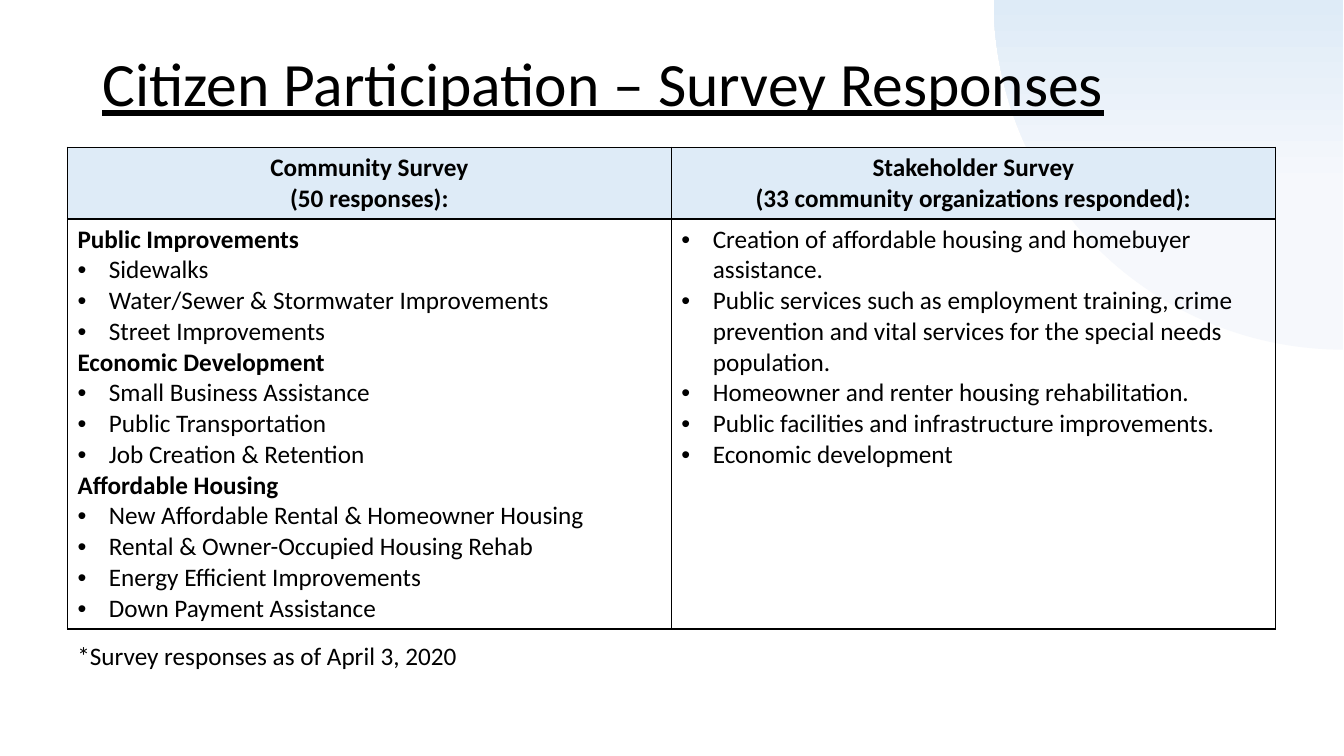
from copy import deepcopy
from pptx import Presentation
from pptx.dml.color import RGBColor
from pptx.enum.shapes import MSO_SHAPE as Preset
from pptx.enum.text import MSO_ANCHOR as Anchor, PP_ALIGN as Align
from pptx.oxml import parse_xml
from pptx.oxml.ns import nsdecls
from pptx.util import Cm, Pt


def color(value):
    return RGBColor.from_string(value)


def write(para, text, **changes):
    span = para.add_run()
    span.text = text
    values = {"name": "Calibri", "size": Pt(18), "bold": False} | changes
    for name, value in values.items():
        setattr(span.font, name, value)
    span.font.color.rgb = color("000000")


deck = Presentation()
deck.slide_width, deck.slide_height = Cm(33.87), Cm(19.05)
page = deck.slides.add_slide(deck.slide_layouts[6])

# Corner arc with a vertical gradient
arc = page.shapes.add_shape(Preset.ARC, Cm(25.04), Cm(-8.84), Cm(17.63), Cm(17.65))
arc.rotation = 180
arc.shadow.inherit = False
arc.line.fill.background()
arc.fill.gradient()
arc.fill.gradient_angle = 270
stop_list = arc.element.spPr.find(".//{*}gsLst")
for stop in list(stop_list)[:2]:
    stop_list.append(deepcopy(stop))
shades = [(0.23, "F6F8FC"), (0.5, "DEEBF7"), (0.79, "E3EAF6"), (0.92, "C7D5ED")]
for stop, (position, shade) in zip(arc.fill.gradient_stops, shades):
    stop.position = position
    stop.color.rgb = color(shade)

# Title
title = page.shapes.add_textbox(Cm(2.33), Cm(1.02), Cm(29.21), Cm(2.34)).text_frame
title.word_wrap = True
title.vertical_anchor = Anchor.MIDDLE
title.paragraphs[0].line_spacing = 0.9
write(title.paragraphs[0], "Citizen Participation – Survey Responses",
      size=Pt(44), underline=True)

# Survey table: headers and topics are bold, other body lines are bulleted
headers = [
    ["Community Survey", "(50 responses):"],
    ["Stakeholder Survey", "(33 community organizations responded):"],
]
topics = ["Public Improvements", "Economic Development", "Affordable Housing"]
answers = [
    [
        topics[0],
        "Sidewalks",
        "Water/Sewer & Stormwater Improvements",
        "Street Improvements",
        topics[1],
        "Small Business Assistance",
        "Public Transportation",
        "Job Creation & Retention",
        topics[2],
        "New Affordable Rental & Homeowner Housing",
        "Rental & Owner-Occupied Housing Rehab",
        "Energy Efficient Improvements",
        "Down Payment Assistance",
    ],
    [
        "Creation of affordable housing and homebuyer assistance.",
        "Public services such as employment training, crime prevention "
        "and vital services for the special needs population.",
        "Homeowner and renter housing rehabilitation.",
        "Public facilities and infrastructure improvements.",
        "Economic development",
    ],
]
table = page.shapes.add_table(2, 2, Cm(1.7), Cm(3.71), Cm(30.44), Cm(12.14)).table
table.horz_banding = False
for row, height in zip(table.rows, [1.81, 10.33]):
    row.height = Cm(height)

for row_index, row_texts in enumerate([headers, answers]):
    is_header = row_index == 0
    for column_index, lines in enumerate(row_texts):
        cell = table.cell(row_index, column_index)

        # Borders, then fill
        for side in "LRTB":
            cell._tc.get_or_add_tcPr().append(parse_xml(
                f'<a:ln{side} {nsdecls("a")} w="12700"><a:solidFill>'
                f'<a:srgbClr val="000000"/></a:solidFill></a:ln{side}>'))
        if is_header:
            cell.fill.solid()
            cell.fill.fore_color.rgb = color("DEEBF7")
        else:
            cell.fill.background()

        # Lines of text
        for line_index, text in enumerate(lines):
            frame = cell.text_frame
            para = frame.add_paragraph() if line_index else frame.paragraphs[0]
            para.alignment = Align.CENTER if is_header else Align.LEFT
            is_bold = is_header or text in topics
            write(para, text, bold=is_bold)
            if not is_bold:
                props = para._p.get_or_add_pPr()
                props.set("marL", str(Cm(0.79)))
                props.set("indent", str(Cm(-0.79)))
                props.append(parse_xml(f'<a:buFont {nsdecls("a")} typeface="Arial"/>'))
                props.append(parse_xml(f'<a:buChar {nsdecls("a")} char="•"/>'))

# Footnote
note = page.shapes.add_textbox(Cm(1.7), Cm(16), Cm(10.19), Cm(1.02)).text_frame
note.word_wrap = False
write(note.paragraphs[0], "*Survey responses as of April 3, 2020")

deck.save("out.pptx")
